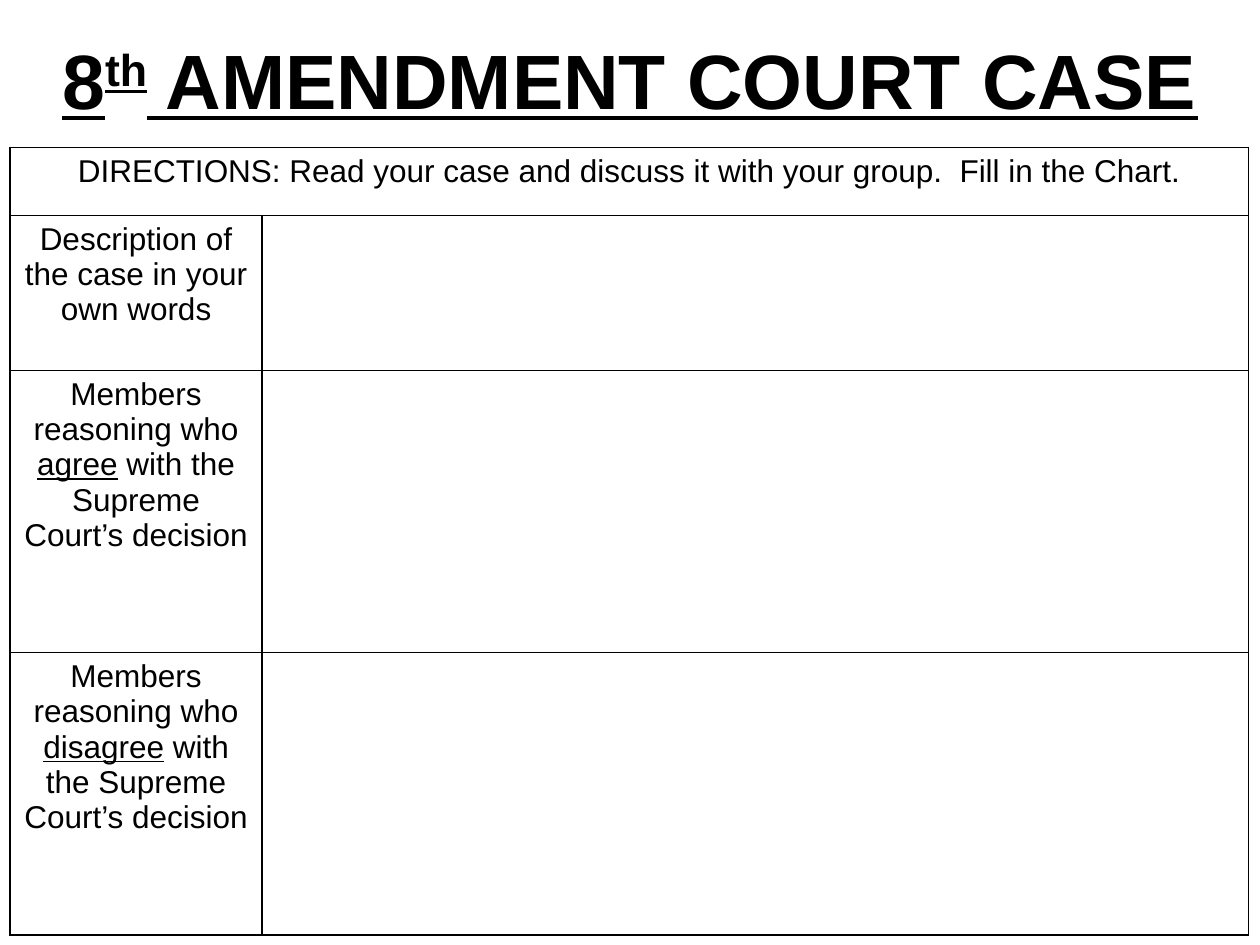
import pptx
import pptx.util
import pptx.dml.color
import pptx.enum.text
import pptx.oxml
import pptx.oxml.ns
from pptx.util import Inches

HUES = {"ink": "000000", "page": "FFFFFF"}


def write(par, text, size=18, bold=False, under=False, raised=0, font="Arial", hue="ink"):
    run = par.add_run()
    run.text = text
    run.font.name = font
    run.font.size = pptx.util.Pt(size)
    run.font.bold = bold
    run.font.underline = under
    run.font.color.rgb = pptx.dml.color.RGBColor.from_string(HUES[hue])
    if raised:
        run.font._element.set("baseline", str(raised * 1000))


class Sheet:
    def __init__(self, deck):
        self.slide = deck.slides.add_slide(deck.slide_layouts[6])
        fill = self.slide.background.fill
        fill.solid()
        fill.fore_color.rgb = pptx.dml.color.RGBColor.from_string(HUES["page"])

    def fill_text(self, frame, runs, **style):
        frame.word_wrap = True
        par = frame.paragraphs[0]
        par.alignment = pptx.enum.text.PP_ALIGN.CENTER
        for text, extra in runs:
            write(par, text, **{**style, **extra})

    def title(self, runs, left, top, width, height):
        box = self.slide.shapes.add_textbox(
            Inches(left), Inches(top), Inches(width), Inches(height))
        box.text_frame.vertical_anchor = pptx.enum.text.MSO_ANCHOR.MIDDLE
        self.fill_text(box.text_frame, runs, size=44, bold=True, under=True)

    def border(self, cell, points=1):
        props = cell._tc.get_or_add_tcPr()
        for side in ("lnL", "lnR", "lnT", "lnB"):
            props.append(pptx.oxml.parse_xml(
                f'<a:{side} {pptx.oxml.ns.nsdecls("a")} w="{pptx.util.Pt(points)}">'
                f'<a:solidFill><a:srgbClr val="{HUES["ink"]}"/></a:solidFill></a:{side}>'))

    def table(self, left, top, cols, rows, labels):
        grid = self.slide.shapes.add_table(
            len(rows), len(cols), Inches(left), Inches(top),
            Inches(sum(cols)), Inches(sum(rows))).table
        grid.first_row = grid.horz_banding = False
        for col, width in zip(grid.columns, cols):
            col.width = Inches(width)
        for row, height in zip(grid.rows, rows):
            row.height = Inches(height)
        for cell in grid.iter_cells():
            self.border(cell)
            cell.fill.background()
        grid.cell(0, 0).merge(grid.cell(0, len(cols) - 1))
        for index, runs in enumerate(labels):
            self.fill_text(grid.cell(index, 0).text_frame, runs)


def reason(verb):
    return [("Members reasoning who ", {}), (verb, {"under": True}),
            (" with the Supreme Court’s decision", {})]


def main():
    deck = pptx.Presentation()
    deck.slide_width, deck.slide_height = Inches(10), Inches(7.5)
    sheet = Sheet(deck)
    sheet.title([("8", {}), ("th", {"raised": 30}), (" AMENDMENT COURT CASE", {})],
                0, 0, 10, 1.25)
    sheet.table(0.08, 1.17, [2, 7.83], [0.54, 1.23, 2.24, 2.24], [
        [("DIRECTIONS: Read your case and discuss it with your group.  Fill in the Chart.", {})],
        [("Description of the case in your own words", {})],
        reason("agree"),
        reason("disagree"),
    ])
    deck.save("out.pptx")


if __name__ == "__main__":
    main()
